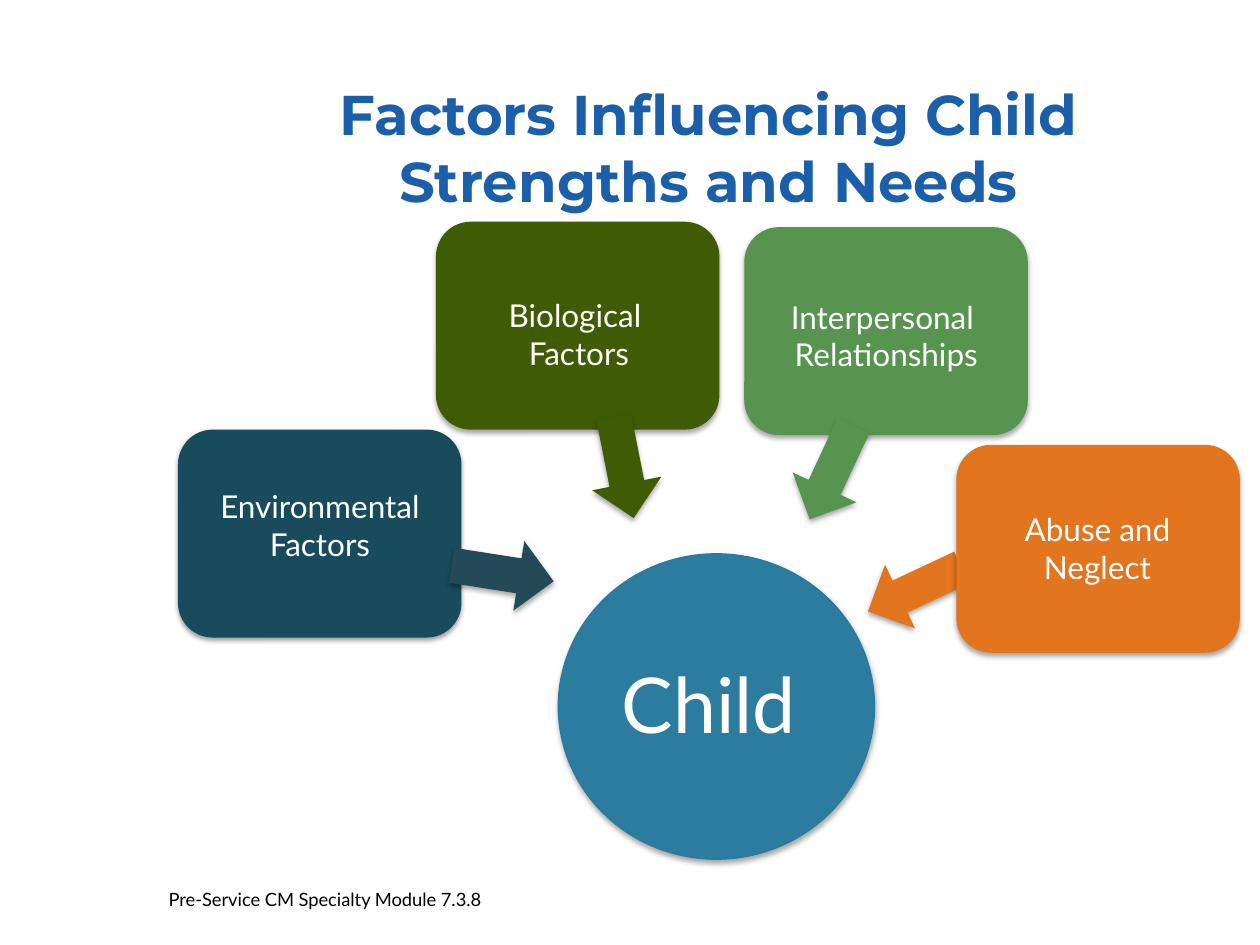
from lxml import etree
from pptx import Presentation
from pptx.dml.color import RGBColor
from pptx.enum import shapes, text
from pptx.oxml import ns
from pptx.util import Pt

WHITE = RGBColor(0xFF, 0xFF, 0xFF)
BLACK = RGBColor(0, 0, 0)
TITLE_BLUE = RGBColor(0x1B, 0x5F, 0xAA)
CHILD_BLUE = RGBColor(0x2C, 0x7C, 0x9F)
CHILD_EDGE = RGBColor(0x28, 0x7A, 0x9E)
TEAL = RGBColor(0x18, 0x4B, 0x5B)
SLATE = RGBColor(0x24, 0x4A, 0x58)
ORANGE = RGBColor(0xE2, 0x75, 0x1D)
GREEN = RGBColor(0x56, 0x94, 0x4F)
OLIVE = RGBColor(0x3F, 0x5B, 0x03)

BOX_SIZE = (162, 118.8)
ARROW_SIZE = (40.3, 59)
PRESET = shapes.MSO_SHAPE


def write(frame, lines, size=18, font="Lato", color=WHITE, bold=False,
          align=text.PP_ALIGN.CENTER, anchor=text.MSO_ANCHOR.TOP):
    frame.word_wrap = True
    frame.vertical_anchor = anchor
    for index, line in enumerate(lines):
        paragraph = frame.add_paragraph() if index else frame.paragraphs[0]
        paragraph.alignment = align
        run = paragraph.add_run()
        run.text = line
        run.font.size = Pt(size)
        run.font.name = font
        run.font.bold = bold
        run.font.color.rgb = color


class FactorSlide:
    def __init__(self, slide):
        self.slide = slide

    def title(self, wording, left, top, width, height):
        heading = self.slide.shapes.title
        heading.left, heading.top = Pt(left), Pt(top)
        heading.width, heading.height = Pt(width), Pt(height)
        write(heading.text_frame, [wording], size=32, font="Montserrat",
              color=TITLE_BLUE, bold=True, anchor=text.MSO_ANCHOR.MIDDLE)
        heading.text_frame.auto_size = text.MSO_AUTO_SIZE.NONE

    def solid(self, preset, left, top, size, fill, edge=None, alpha=35, distance=1.8):
        solid = self.slide.shapes.add_shape(
            preset, Pt(left), Pt(top), *(Pt(side) for side in size))
        solid.fill.solid()
        solid.fill.fore_color.rgb = fill
        if edge is None:
            solid.line.fill.background()
        else:
            solid.line.color.rgb = edge
            solid.line.width = Pt(0.75)
        self.shade(solid, alpha, distance)
        return solid

    def shade(self, solid, alpha, distance):
        solid.shadow.inherit = False
        effects = solid.element.spPr.find(ns.qn("a:effectLst"))
        outer = etree.SubElement(
            effects, ns.qn("a:outerShdw"), blurRad=str(Pt(3.1)),
            dist=str(Pt(distance)), dir="5400000", rotWithShape="0")
        tint = etree.SubElement(outer, ns.qn("a:srgbClr"), val=str(BLACK))
        etree.SubElement(tint, ns.qn("a:alpha"), val=str(alpha * 1000))

    def arrow(self, left, top, rotation, fill):
        arrow = self.solid(PRESET.UP_ARROW, left, top, ARROW_SIZE, fill)
        arrow.rotation = rotation

    def box(self, left, top, fill, **shadow):
        self.solid(PRESET.ROUNDED_RECTANGLE, left, top, BOX_SIZE, fill, **shadow)

    def label(self, lines, left, top, width, height=51, **style):
        label = self.slide.shapes.add_textbox(Pt(left), Pt(top), Pt(width), Pt(height))
        write(label.text_frame, lines, **style)


def main():
    deck = Presentation()
    deck.slide_width, deck.slide_height = Pt(720), Pt(540)
    page = FactorSlide(deck.slides.add_slide(deck.slide_layouts[5]))

    page.title("Factors Influencing Child Strengths and Needs", 126, 38.9, 558, 90)
    page.arrow(502.6, 307.4, 244.9, ORANGE)
    page.solid(PRESET.OVAL, 319, 316.5, (180.7, 174.5), CHILD_BLUE, edge=CHILD_EDGE)
    page.label(["Child"], 329.8, 371.5, 150.5, 60.5, size=44)

    page.box(101.7, 245.5, TEAL, alpha=38, distance=1.6)
    for left, top, fill in [(546.5, 254.2, ORANGE), (425.3, 129.8, GREEN),
                            (249.1, 126.7, OLIVE)]:
        page.box(left, top, fill)

    for left, top, rotation, fill in [(267.1, 298.1, 98.9, SLATE),
                                      (455, 240.5, 205, GREEN),
                                      (336.2, 237.6, 168.8, OLIVE)]:
        page.arrow(left, top, rotation, fill)

    for lines, left, top, width in [
            (["Environmental Factors"], 116.6, 275, 132.5),
            (["Biological ", "Factors"], 255.6, 165.6, 150.5),
            (["Interpersonal ", "Relationships"], 442.8, 166.5, 127.4),
            (["Abuse and", "Neglect"], 560.9, 288, 132.5)]:
        page.label(lines, left, top, width)

    page.label(["Pre-Service CM Specialty Module 7.3.8"], 89.3, 504, 215.3, 23.8,
               size=10.5, color=BLACK, align=text.PP_ALIGN.LEFT)
    deck.save("out.pptx")


if __name__ == "__main__":
    main()
